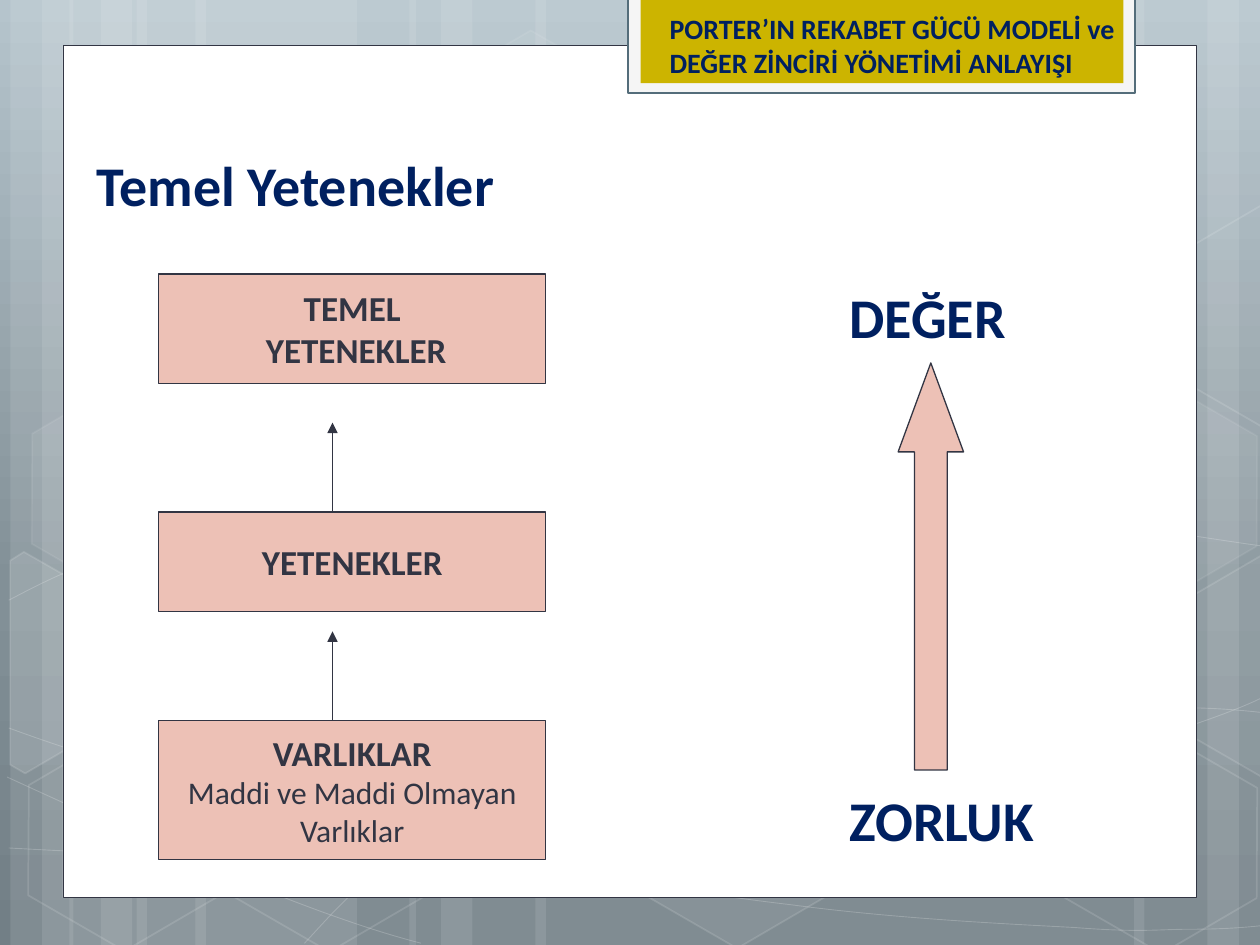
from copy import deepcopy

from lxml import etree
from pptx import Presentation
from pptx.dml.color import RGBColor
from pptx.enum.shapes import MSO_CONNECTOR, MSO_SHAPE
from pptx.enum.text import MSO_ANCHOR, MSO_AUTO_SIZE, PP_ALIGN
from pptx.oxml.ns import qn
from pptx.util import Pt

RECT, HEXAGON, UP_ARROW = MSO_SHAPE.RECTANGLE, MSO_SHAPE.HEXAGON, MSO_SHAPE.UP_ARROW
LEFT, CENTER, MIDDLE, TOP = PP_ALIGN.LEFT, PP_ALIGN.CENTER, MSO_ANCHOR.MIDDLE, MSO_ANCHOR.TOP
FONT, NAVY, INK, PINK, WHITE = "Calibri", "002060", "323543", "EDC1B6", "FFFFFF"
WIDTH, HEIGHT = 720, 540

TITLE = "Temel Yetenekler"
HEADER = "PORTER’IN REKABET GÜCÜ MODELİ ve DEĞER ZİNCİRİ YÖNETİMİ ANLAYIŞI"
# top, height, lines of (text, size, bold)
BOXES = [
    (156.6, 62.5, [("TEMEL", 20, True), (" YETENEKLER", 20, True)]),
    (292.5, 57, [("YETENEKLER", 20, True)]),
    (411.8, 79.4, [("VARLIKLAR", 20, True), ("Maddi ve Maddi Olmayan", 18, False),
                   ("Varlıklar", 18, False)]),
]
SCALE_LABELS = [("ZORLUK", 445.2), ("DEĞER", 158)]

GRADIENT = [(0, "B5C4CC"), (0.62, "829097"), (1, "727F86")]
# left, width
STRIPES = [(78, 126), (6, 36), (24, 60), (111.6, 126), (39.6, 36), (57.6, 60),
           (528, 126), (690, 36), (648, 60), (306, 222), (234, 36), (252, 60)]
# Bezier curves: start point, then two control points and an end point per segment
CURVES = [
    [(5, 484.6), (44, 486.7), (83, 489), (137, 488), (191, 487.4), (258, 486), (330, 479),
     (402, 471.6), (504, 458), (570, 444), (636, 430.6), (703, 409), (725, 396.7)],
    [(5, 343), (26, 332), (47, 321), (87, 310), (128, 299.5), (186, 284), (250, 278.6),
     (314, 273), (392, 273), (471, 278.6), (550, 284), (682, 307), (725, 312.5)],
    [(4, 444), (91, 484), (178, 523), (240.5, 539)],
    [(5, 416), (27, 424), (50, 432), (92, 443.5), (134, 454), (197, 472), (257, 484.6),
     (317, 497), (392, 510), (452, 517), (512, 525), (576, 528), (614, 530),
     (652, 533), (662, 531), (680, 531), (699, 531), (712, 530), (725, 528.5)],
    [(174, 539), (187, 525), (200, 510), (217, 497.5), (235, 484.6), (259, 470), (279, 460),
     (299.5, 450), (312, 446), (338, 438.5), (364, 431), (413, 421), (438, 416),
     (464, 411), (467, 411), (490, 410), (512, 407.5), (547, 405), (572, 404.6),
     (597, 404), (638, 404.6), (638, 404.6), (654, 404.6), (670, 404.6), (686, 404.6),
     (699, 405), (711, 406), (724, 407.5)],
]
# left, top, fill opacity, line opacity (percent)
HEXAGONS = [(240.5, 26, 4, 8), (358, 424, 6, 12), (8, 425.5, 0, 12), (10, 224.6, 7, 8),
            (125, 426, 0, 12), (542, 326, 10, 12), (600.5, 427, 0, 12), (600.5, 226, 7, 8)]
# fill opacity, points of hexagons cut by the slide edge
CUT_HEXAGONS = [
    (10, [(5.8, 320.4), (13.7, 315.4), (69, 347), (68.4, 410.4), (14.4, 442), (5.8, 437)]),
    (4, [(666.7, 349), (720.7, 317.5), (726.5, 321), (726.5, 441.4), (721.4, 444.2),
         (666.7, 412.6)]),
    (0, [(666.7, 149), (720.7, 117.4), (727, 121), (726.5, 241.2), (721.4, 244),
         (666.7, 212.4)]),
]


def color(hex_text):
    return RGBColor.from_string(hex_text)


def set_alpha(fill_parent, percent):
    """Make the solid colour below an element partly transparent."""
    if percent < 100:
        clr = fill_parent.find(qn("a:solidFill") + "/" + qn("a:srgbClr"))
        etree.SubElement(clr, qn("a:alpha")).set("val", str(percent * 1000))


def style(sp, fill=None, line=None, width=0.75, fill_alpha=100, line_alpha=100):
    sp.shadow.inherit = False
    props = sp._element.spPr
    if fill and fill_alpha:
        sp.fill.solid()
        sp.fill.fore_color.rgb = color(fill)
        set_alpha(props, fill_alpha)
    else:
        sp.fill.background()
    if line:
        sp.line.color.rgb = color(line)
        sp.line.width = Pt(width)
        set_alpha(props.find(qn("a:ln")), line_alpha)
    else:
        sp.line.fill.background()


def add_shape(slide, kind, x, y, w, h, **look):
    sp = slide.shapes.add_shape(kind, Pt(x), Pt(y), Pt(w), Pt(h))
    style(sp, **look)
    return sp


def add_outline(slide, points, close, **look):
    builder = slide.shapes.build_freeform(Pt(points[0][0]), Pt(points[0][1]))
    builder.add_line_segments([(Pt(x), Pt(y)) for x, y in points[1:]], close=close)
    sp = builder.convert_to_shape()
    style(sp, **look)
    return sp


def bend(sp):
    """Turn every three straight segments of an outline into one Bezier segment."""
    segments = list(sp._element.iter(qn("a:lnTo")))
    for i in range(0, len(segments), 3):
        curve = etree.Element(qn("a:cubicBezTo"))
        segments[i].addprevious(curve)
        for segment in segments[i:i + 3]:
            curve.append(segment[0])
            segment.getparent().remove(segment)


def write(sp, lines, ink, align=LEFT, anchor=TOP, wrap=True):
    tf = sp.text_frame
    tf.word_wrap = wrap
    tf.auto_size = MSO_AUTO_SIZE.NONE
    tf.vertical_anchor = anchor
    for i, (text, size, bold) in enumerate(lines):
        p = tf.add_paragraph() if i else tf.paragraphs[0]
        p.alignment = align
        r = p.add_run()
        r.text = text
        r.font.name, r.font.size, r.font.bold = FONT, Pt(size), bold
        r.font.color.rgb = color(ink)


def add_text(slide, x, y, w, h, text, size):
    write(slide.shapes.add_textbox(Pt(x), Pt(y), Pt(w), Pt(h)), [(text, size, True)], NAVY)


def add_arrow(slide, x, y_from, y_to):
    line = slide.shapes.add_connector(MSO_CONNECTOR.STRAIGHT, Pt(x), Pt(y_from), Pt(x), Pt(y_to))
    line.line.color.rgb = color(INK)
    line.line.width = Pt(0.75)
    props = line._element.spPr
    etree.SubElement(props.find(qn("a:ln")), qn("a:tailEnd")).set("type", "triangle")
    etree.SubElement(props, qn("a:effectLst"))


def set_background(master):
    fill = master.background.fill
    fill.gradient()
    fill.gradient_angle = 270
    stops = master._element.find(".//" + qn("a:gsLst"))
    stops.insert(1, deepcopy(stops[0]))
    for stop, (position, hex_text) in zip(fill.gradient_stops, GRADIENT):
        stop.position = position
        stop.color.rgb = color(hex_text)


def draw_backdrop(slide, master):
    """Draw the decoration and hand it over to the slide master."""
    for x, w in STRIPES:
        add_shape(slide, RECT, x, 0, w, HEIGHT, fill=WHITE, fill_alpha=10)
    for nodes in CURVES:
        bend(add_outline(slide, nodes, False, line=WHITE, width=0.5, line_alpha=20))
    for x, y, fill_alpha, line_alpha in HEXAGONS:
        sp = add_shape(slide, HEXAGON, x, y, 126, 109.4, fill=WHITE, line=WHITE, width=1,
                       fill_alpha=fill_alpha, line_alpha=line_alpha)
        sp.adjustments[0] = 0.285
        sp.rotation = 30
    for fill_alpha, points in CUT_HEXAGONS:
        add_outline(slide, points, True, fill=WHITE, line=WHITE, width=1,
                    fill_alpha=fill_alpha, line_alpha=12)
    add_shape(slide, RECT, 36, 26, 648, 487, fill=WHITE, line=INK, width=0.5)
    add_shape(slide, RECT, 359, -1.5, 289.5, 54.7, fill="F5F5F5", line="546D7A", width=1.25)
    add_shape(slide, RECT, 366, -1.5, 276, 49, fill="CCB400")
    for sp in list(slide.shapes):
        if not sp.is_placeholder:
            master.shapes._spTree.append(sp._element)


def main():
    prs = Presentation()
    prs.slide_width, prs.slide_height = Pt(WIDTH), Pt(HEIGHT)
    slide = prs.slides.add_slide(prs.slide_layouts[5])
    set_background(prs.slide_master)
    draw_backdrop(slide, prs.slide_master)
    add_text(slide, 375.6, 3, 273.6, 85, HEADER, 16)

    title = slide.shapes.title
    title.left, title.top, title.width, title.height = Pt(48), Pt(82), Pt(527), Pt(46)
    write(title, [(TITLE, 32, True)], NAVY, anchor=MIDDLE)

    for y, h, lines in BOXES:
        sp = add_shape(slide, RECT, 90.7, y, 221.2, h, fill=PINK, line=INK)
        write(sp, lines, INK, CENTER, MIDDLE, wrap=False)
    for y, _, _ in BOXES[1:]:
        add_arrow(slide, 190, y, y - 51)

    for text, y in SCALE_LABELS:
        add_text(slide, 478.2, y, 171.4, 46, text, 32)
    arrow = add_shape(slide, UP_ARROW, 513.2, 207.4, 37.4, 232.6, fill=PINK, line=INK)
    arrow.adjustments[0], arrow.adjustments[1] = 0.5, 1.36
    prs.save("out.pptx")


if __name__ == "__main__":
    main()
